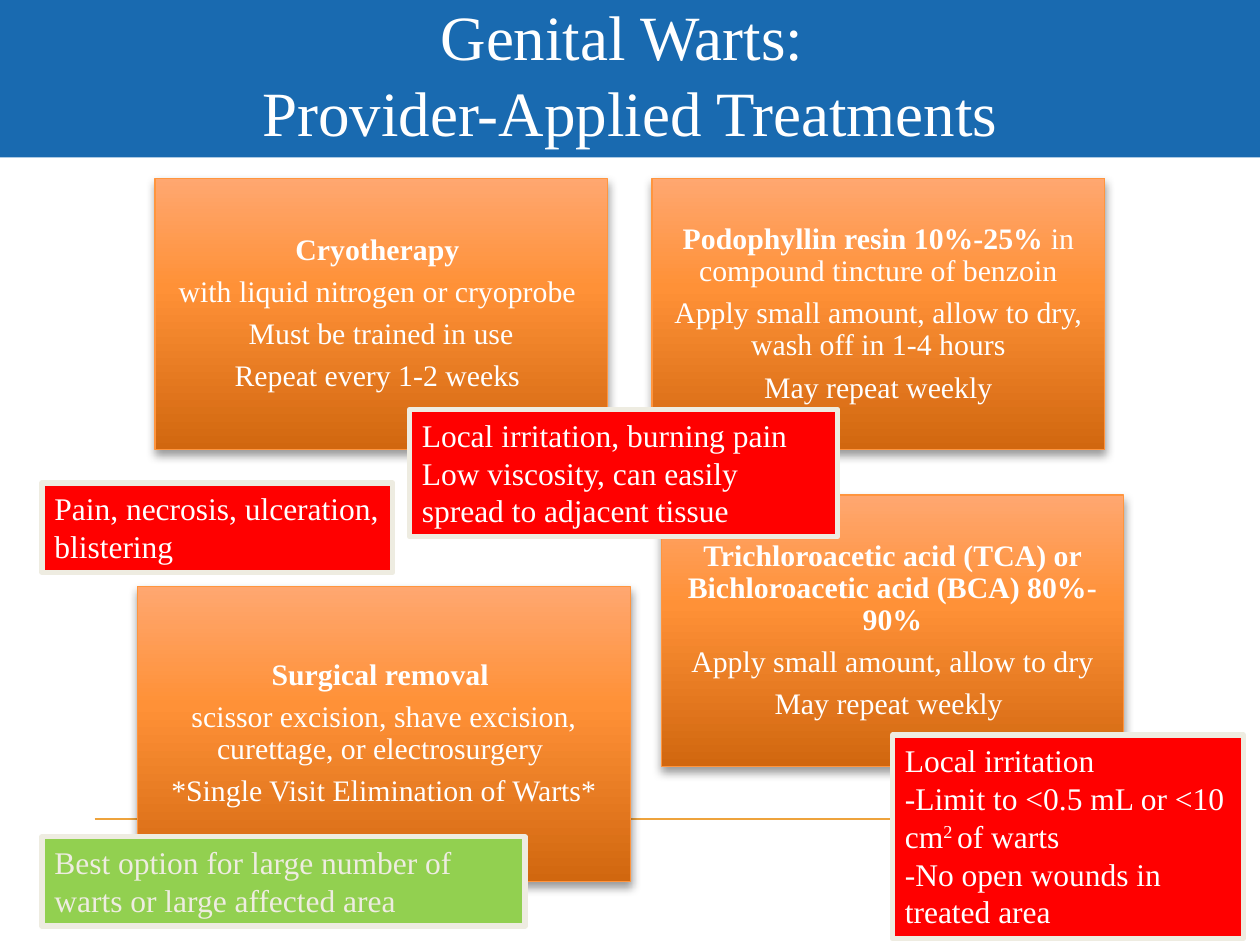
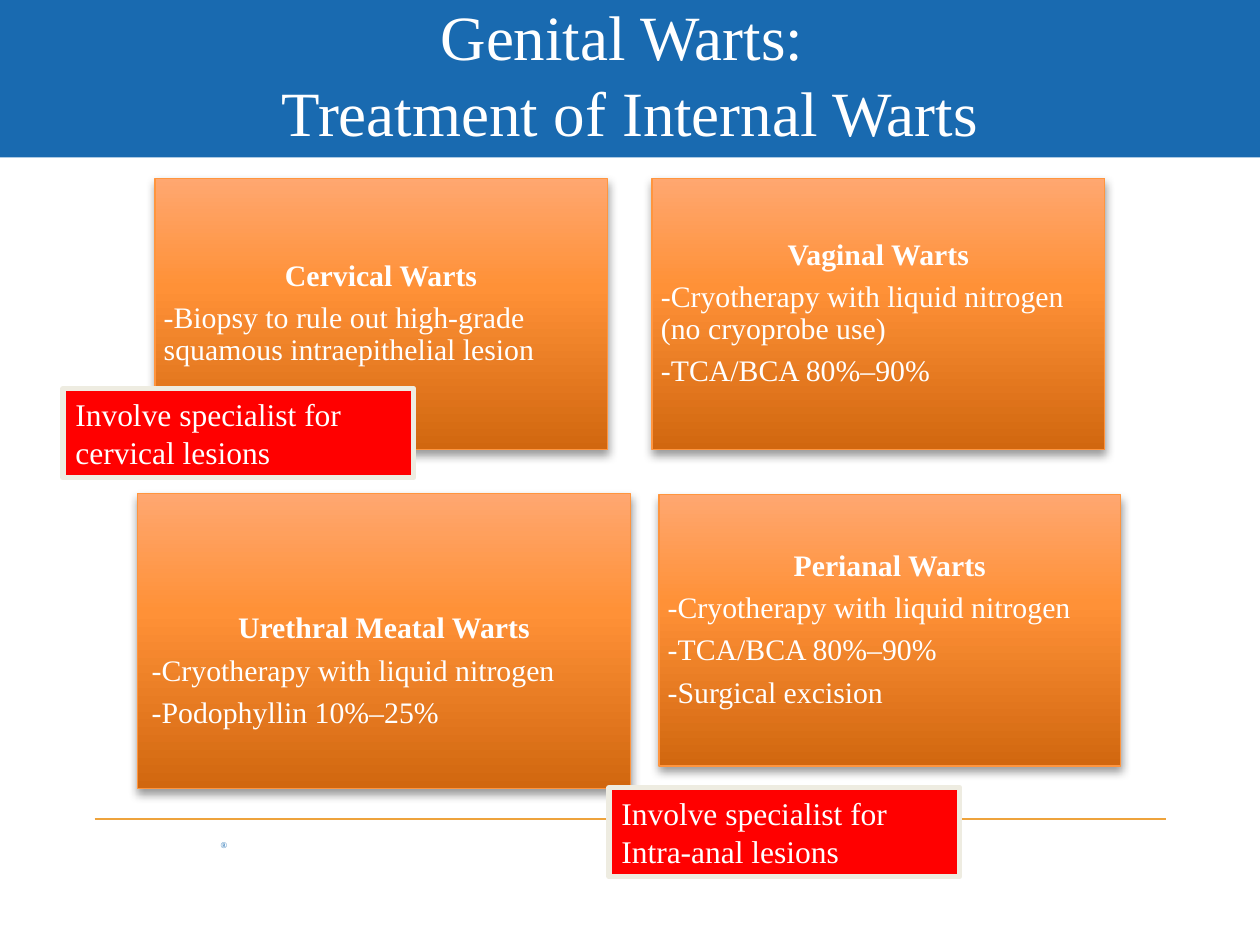
import lxml.etree
import pptx
import pptx.dml.color
import pptx.enum.shapes
import pptx.enum.text
import pptx.oxml
import pptx.oxml.ns
import pptx.util

Pt = pptx.util.Pt
RGB = pptx.dml.color.RGBColor
ALIGN = pptx.enum.text.PP_ALIGN
ANCHOR = pptx.enum.text.MSO_ANCHOR
RECTANGLE = pptx.enum.shapes.MSO_SHAPE.RECTANGLE

WIDTH, HEIGHT = pptx.util.Inches(10), pptx.util.Inches(7.5)
COLUMNS, ROWS = 120, 90
CELL = WIDTH / COLUMNS

BLUE = RGB(0x19, 0x6A, 0xB0)
GOLD = RGB(0xEE, 0xA3, 0x3C)
WHITE = RGB(0xFF, 0xFF, 0xFF)
RED = RGB(0xFF, 0x00, 0x00)
GREEN = RGB(0x92, 0xD0, 0x50)
CREAM = RGB(0xEE, 0xEC, 0xE1)
CARD_EDGE = RGB(0xFF, 0x95, 0x3E)
CARD_STOPS = ((0, RGB(0xD1, 0x67, 0x0F)), (60, RGB(0xFF, 0x91, 0x37)),
              (100, RGB(0xFF, 0xA7, 0x70)))
SHADOW_COLOR = RGB(0, 0, 0)

FONT = "Times New Roman"
TITLE_FONT = {"name": FONT, "size": Pt(36), "color": WHITE}
CARD_FONT = {"name": FONT, "size": Pt(17), "color": WHITE}
NOTE_FONT = {"name": FONT, "size": Pt(18), "color": WHITE}
MARK_FONT = {"name": FONT, "size": Pt(5), "color": BLUE}
BOLD = {"bold": True}
SUPERSCRIPT = {"baseline": 30000}

# Boxes are left, top, width, height in grid cells.
BAND = (0, 0, COLUMNS, 15)
TITLE = (6, 1, 108, 12)
RULE_LEFT, RULE_RIGHT, RULE_ROW = 9, 111, 78
MARK = (21, 80, 3, 1)
TOP_LEFT = (14.75, 17, 43.1, 25.85)
TOP_RIGHT = (62.1, 17, 43.1, 25.85)
LOW_LEFT_SIZE = (46.95, 28.1)
LOW_RIGHT_SIZE = (44, 25.85)
NOTE_SIZE = (33.4, 8.5)
CARD_INSET, WIDE_INSET = 0.84, 1.35


def cells(*counts):
    return [round(count * CELL) for count in counts]


def apply(target, formats):
    for name, value in formats.items():
        setattr(target, name, value)


def write(shape, paras, font, para_format, frame_format):
    """Fill a shape with paragraphs, each a list of (text, extra font values)."""
    frame = shape.text_frame
    apply(frame, {"word_wrap": True, **frame_format})
    for index, spans in enumerate(paras):
        para = frame.paragraphs[0] if index == 0 else frame.add_paragraph()
        apply(para, {"alignment": ALIGN.LEFT, **para_format})
        if index == 0 and "first_alignment" in font:
            para.alignment = font["first_alignment"]
        for text, extra in spans:
            span = para.add_run()
            span.text = text
            values = {**font, **extra}
            span.font.color.rgb = values["color"]
            apply(span.font, {key: values[key] for key in ("name", "size", "bold")
                              if key in values})
            if "baseline" in values:
                span._r.get_or_add_rPr().set("baseline", str(values["baseline"]))


def margins(inset, top=None):
    sides = {f"margin_{side}": cells(inset)[0]
             for side in ("left", "top", "right", "bottom")}
    if top is not None:
        sides["margin_top"] = cells(top)[0]
    return sides


def add_panel(page, box, fill=None, edge=None, weight=0):
    panel = page.shapes.add_shape(RECTANGLE, *cells(*box))
    panel.shadow.inherit = False
    if fill is not None:
        panel.fill.solid()
        panel.fill.fore_color.rgb = fill
    if edge is None:
        panel.line.fill.background()
    else:
        panel.line.color.rgb = edge
        panel.line.width = Pt(weight)
    return panel


def shade_card(card):
    """Give a card its upward gradient and soft drop shadow."""
    names = pptx.oxml.ns.nsdecls("a")
    stops = "".join(f'<a:gs pos="{share * 1000}"><a:srgbClr val="{color}"/></a:gs>'
                    for share, color in CARD_STOPS)
    gradient = pptx.oxml.parse_xml(
        f'<a:gradFill {names} rotWithShape="1"><a:gsLst>{stops}</a:gsLst>'
        '<a:lin ang="16200000" scaled="0"/></a:gradFill>')
    shadow = pptx.oxml.parse_xml(
        f'<a:outerShdw {names} blurRad="{Pt(5.2)}" dist="{Pt(3)}" dir="5400000" '
        f'rotWithShape="0"><a:srgbClr val="{SHADOW_COLOR}"><a:alpha val="40000"/>'
        '</a:srgbClr></a:outerShdw>')
    properties = card._element.spPr
    properties.find(pptx.oxml.ns.qn("a:prstGeom")).addnext(gradient)
    properties.find(pptx.oxml.ns.qn("a:effectLst")).append(shadow)


def add_card(page, box, heading, lines, tail="", align=ALIGN.CENTER,
             inset=CARD_INSET, drop=0):
    """Add a treatment card; drop moves its text down by that many cells."""
    card = add_panel(page, box, edge=CARD_EDGE, weight=0.75)
    shade_card(card)
    first = [(heading, BOLD)] + ([(tail, {})] if tail else [])
    paras = [first] + [[(line, {})] for line in lines]
    write(card, paras, {**CARD_FONT, "first_alignment": ALIGN.CENTER},
          {"alignment": align, "line_spacing": 0.9, "space_after": Pt(5.7)},
          {"vertical_anchor": ANCHOR.MIDDLE, **margins(inset, inset + 2 * drop)})


def add_note(page, box, paras, fill=RED, color=WHITE):
    note = add_panel(page, box, fill, CREAM, 3)
    write(note, paras, {**NOTE_FONT, "color": color}, {},
          {"vertical_anchor": ANCHOR.TOP})


def add_page(deck, title_lines, mark=""):
    """Add a slide with the title band, the footer rule and an optional mark."""
    page = deck.slides.add_slide(deck.slide_layouts[6])
    add_panel(page, BAND, BLUE)
    if mark:
        write(page.shapes.add_textbox(*cells(*MARK)), [[(mark, {})]], MARK_FONT,
              {}, margins(0))
    rule = page.shapes.add_connector(
        pptx.enum.shapes.MSO_CONNECTOR.STRAIGHT,
        *cells(RULE_LEFT, RULE_ROW, RULE_RIGHT, RULE_ROW))
    rule.line.color.rgb = GOLD
    rule.line.width = Pt(0.75)
    lxml.etree.SubElement(rule._element.spPr, pptx.oxml.ns.qn("a:effectLst"))
    write(page.shapes.add_textbox(*cells(*TITLE)),
          [[(line, {})] for line in title_lines], TITLE_FONT,
          {"alignment": ALIGN.CENTER}, {"vertical_anchor": ANCHOR.MIDDLE})
    return page


def add_provider_page(deck):
    page = add_page(deck, ["Genital Warts: ", "Provider-Applied Treatments"])
    add_card(page, TOP_LEFT, "Cryotherapy ",
             ["with liquid nitrogen or cryoprobe ", "Must be trained in use",
              "Repeat every 1-2 weeks "])
    add_card(page, TOP_RIGHT, "Podophyllin resin 10%-25%",
             ["Apply small amount, allow to dry, wash off in 1-4 hours",
              "May repeat weekly"], tail=" in compound tincture of benzoin")
    add_card(page, (63, 47.15, *LOW_RIGHT_SIZE),
             "Trichloroacetic acid (TCA) or Bichloroacetic acid (BCA) 80%-90%",
             ["Apply small amount, allow to dry", "May repeat weekly "])
    add_card(page, (13.1, 55.85, *LOW_LEFT_SIZE), "Surgical removal ",
             ["scissor excision, shave excision, curettage, or electrosurgery ",
              "*Single Visit Elimination of Warts*"], inset=WIDE_INSET)
    add_note(page, (85, 70, 33.4, 19.4),
             [[("Local irritation", {})],
              [("-Limit to <0.5 mL or <10 cm", {}), ("2 ", SUPERSCRIPT),
               ("of warts", {})],
              [("-No open wounds in treated area", {})]])
    add_note(page, (4, 46, *NOTE_SIZE),
             [[("Pain, necrosis, ulceration, blistering", {})]])
    add_note(page, (4, 79.7, 46, 8.5),
             [[("Best option for large number of warts or large affected area", {})]],
             GREEN, CREAM)
    add_note(page, (39, 39, 40.8, 12.1),
             [[("Local irritation, burning pain", {})],
              [("Low viscosity, can easily spread to adjacent tissue", {})]])


def add_internal_page(deck):
    page = add_page(deck, ["Genital Warts: ", "Treatment of Internal Warts"], "®")
    cryotherapy = "-Cryotherapy with liquid nitrogen"
    acid = "-TCA/BCA 80%–90%"
    cards = [
        (TOP_LEFT, "Cervical Warts",
         ["-Biopsy to rule out high-grade squamous intraepithelial lesion"], {}),
        (TOP_RIGHT, "Vaginal Warts", [cryotherapy + " (no cryoprobe use)", acid], {}),
        ((62.75, 47.1, *LOW_RIGHT_SIZE), "Perianal Warts",
         [cryotherapy, acid, "-Surgical excision"], {}),
        ((13.1, 47, *LOW_LEFT_SIZE), "Urethral Meatal Warts",
         [cryotherapy, "-Podophyllin 10%–25%"],
         {"inset": WIDE_INSET, "drop": 2.9}),
    ]
    for box, heading, lines, options in cards:
        add_card(page, box, heading, lines, align=ALIGN.LEFT, **options)
    for left, top, lesions in ((58, 75, "Intra-anal"), (6, 37, "cervical")):
        add_note(page, (left, top, *NOTE_SIZE),
                 [[(f"Involve specialist for {lesions} lesions", {})]])


def main():
    deck = pptx.Presentation()
    apply(deck, {"slide_width": WIDTH, "slide_height": HEIGHT})
    add_provider_page(deck)
    add_internal_page(deck)
    deck.save("out.pptx")


if __name__ == "__main__":
    main()
